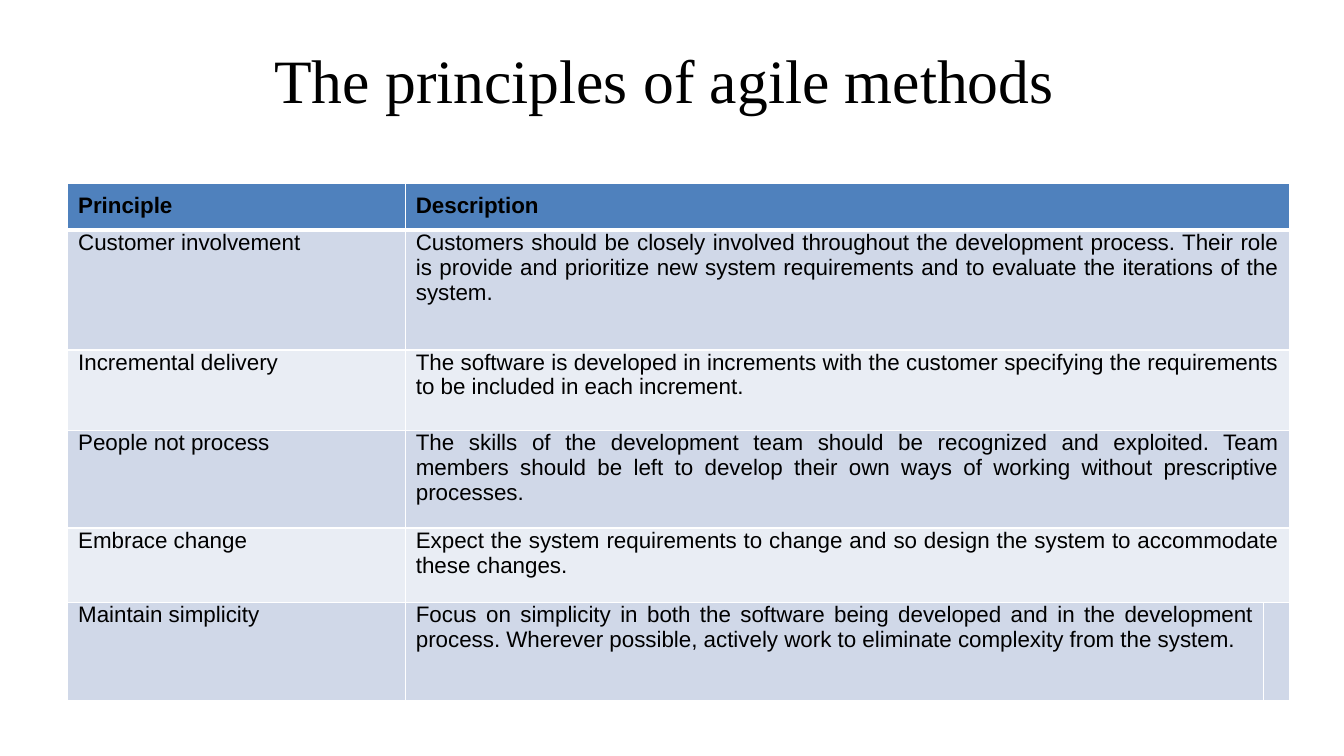
from pptx import Presentation
from pptx import util as u
from pptx.dml.color import RGBColor
from pptx.enum import text
from pptx.oxml import parse_xml
from pptx.oxml.ns import nsdecls

COLORS = {
    "ink": "000000",
    "header": "4F81BD",
    "odd": "D0D8E8",
    "even": "E9EDF4",
    "border": "FFFFFF",
}

PRINCIPLES = [
    ("Principle", "Description"),
    ("Customer involvement ",
     "Customers should be closely involved throughout the development process. "
     "Their role is provide and prioritize new system requirements and to "
     "evaluate the iterations of the system."),
    ("Incremental delivery",
     "The software is developed in increments with the customer specifying the "
     "requirements to be included in each increment."),
    ("People not process",
     "The skills of the development team should be recognized and exploited. "
     "Team members should be left to develop their own ways of working without "
     "prescriptive processes."),
    ("Embrace change",
     "Expect the system requirements to change and so design the system to "
     "accommodate these changes."),
    ("Maintain simplicity",
     "Focus on simplicity in both the software being developed and in the "
     "development process. Wherever possible, actively work to eliminate "
     "complexity from the system."),
]
COLUMN_WIDTHS = [8.51, 21.64, 0.46]
ROW_HEIGHTS = [1.12, 3.02, 2.03, 2.46, 1.88, 2.46]


class SlideBuilder:
    """Holds the style and the current page; lengths are in centimetres."""

    title_font, body_font = "Times New Roman", "Arial"
    title_size, body_size = 44, 16

    def __init__(self, page):
        self.page = page

    def add_words(self, frame, words, font, size, align, bold=False):
        para = frame.paragraphs[0]
        para.alignment = align
        span = para.add_run()
        span.text = words
        span.font.name = font
        span.font.size = u.Pt(size)
        span.font.bold = bold
        span.font.color.rgb = RGBColor.from_string(COLORS["ink"])

    def title(self, words, left, top, width, height):
        box = self.page.shapes.add_textbox(
            u.Cm(left), u.Cm(top), u.Cm(width), u.Cm(height))
        frame = box.text_frame
        frame.word_wrap = True
        frame.vertical_anchor = text.MSO_ANCHOR.MIDDLE
        self.add_words(frame, words, self.title_font, self.title_size,
                       text.PP_ALIGN.CENTER)

    def borders(self, cell, **widths):
        properties = cell._tc.get_or_add_tcPr()
        for side in "LRTB":
            width = u.Pt(widths.get(side, 1))
            properties.append(parse_xml(
                f'<a:ln{side} {nsdecls("a")} w="{width}"><a:solidFill>'
                f'<a:srgbClr val="{COLORS["border"]}"/></a:solidFill></a:ln{side}>'))

    def style_cell(self, cell, row):
        cell.margin_left = cell.margin_right = u.Cm(0.27)
        cell.margin_top = u.Cm(0 if row else 0.25)
        cell.margin_bottom = u.Cm(0.25)
        # A thick line separates the header from the body
        self.borders(cell, T=3 if row == 1 else 1, B=1 if row else 3)
        name = "header" if row == 0 else "odd" if row % 2 else "even"
        cell.fill.solid()
        cell.fill.fore_color.rgb = RGBColor.from_string(COLORS[name])

    def table(self, rows, left, top, widths, heights):
        table = self.page.shapes.add_table(
            len(rows), len(widths), u.Cm(left), u.Cm(top),
            u.Cm(sum(widths)), u.Cm(sum(heights))).table
        for column, width in zip(table.columns, widths):
            column.width = u.Cm(width)
        for line, height in zip(table.rows, heights):
            line.height = u.Cm(height)
        for row, entries in enumerate(rows):
            for column in range(len(widths)):
                self.style_cell(table.cell(row, column), row)
            for column, words in enumerate(entries):
                self.add_words(table.cell(row, column).text_frame, words,
                               self.body_font, self.body_size,
                               text.PP_ALIGN.JUSTIFY, bold=row == 0)
            # Only the last row keeps its narrow third cell
            if row < len(rows) - 1:
                table.cell(row, 1).merge(table.cell(row, 2))


def main():
    deck = Presentation()
    deck.slide_width, deck.slide_height = u.Cm(33.87), u.Cm(19.05)
    builder = SlideBuilder(deck.slides.add_slide(deck.slide_layouts[6]))

    # Heading
    builder.title("The principles of agile methods ", 1.7, 0.41, 30.48, 3.18)

    # Principles and their descriptions
    builder.table(PRINCIPLES, 1.7, 4.62, COLUMN_WIDTHS, ROW_HEIGHTS)

    deck.save("out.pptx")


if __name__ == "__main__":
    main()
